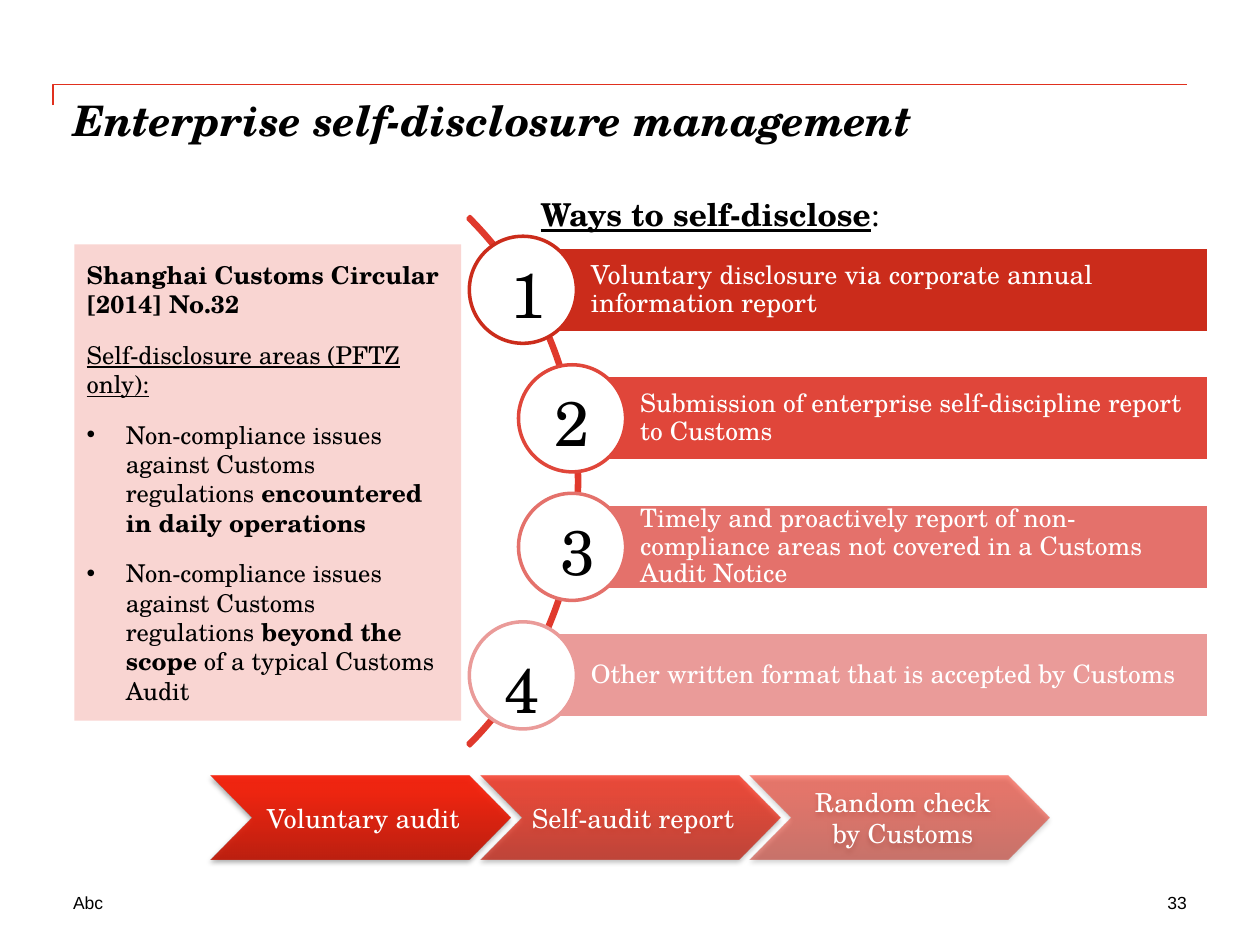
from lxml import etree
from pptx import Presentation
from pptx.dml.color import RGBColor
from pptx.enum.shapes import MSO_SHAPE
from pptx.enum.text import MSO_ANCHOR, MSO_AUTO_SIZE, PP_ALIGN
from pptx.oxml import parse_xml
from pptx.oxml.ns import qn
from pptx.util import Inches, Pt

RECT, DISK = MSO_SHAPE.RECTANGLE, MSO_SHAPE.OVAL
ARC, ARROW = MSO_SHAPE.BLOCK_ARC, MSO_SHAPE.CHEVRON
TOP, MID = MSO_ANCHOR.TOP, MSO_ANCHOR.MIDDLE
LEFT, MIDDLE, RIGHT = PP_ALIGN.LEFT, PP_ALIGN.CENTER, PP_ALIGN.RIGHT
NO_FIT = MSO_AUTO_SIZE.NONE
SERIF, SANS = "TeX Gyre Schola", "Arial"
HUES = {
    "ink": "000000", "paper": "FFFFFF", "rule": "E0301E", "arc": "E0392C",
    "panel": "F9D5D2", "bar1": "CB2C1B", "bar2": "E0463A", "bar3": "E4716B",
    "bar4": "EA9B99", "deep": "BD1201", "glow": "F51801", "top": "F71700",
}
WIDE, HIGH = Inches(10), Inches(7.5)
SIDES = ("margin_left", "margin_top", "margin_right", "margin_bottom")
BOLD, PLAIN = {"bold": True}, {}
UNDER = {"underline": True}
NS = "http://schemas.openxmlformats.org/drawingml/2006/main"


def hue(name):
    return RGBColor.from_string(HUES[name])


def across(share):
    return round(WIDE * share / 100)


def down(share):
    return round(HIGH * share / 100)


def place(box):
    x, y, w, h = box
    return across(x), down(y), across(w), down(h)


def apply(item, form):
    for key, value in form.items():
        setattr(item, key, value)


def write(frame, paras, size, color="ink", font=SERIF, ins=(0, 0, 0, 0),
          anchor=TOP, wrap=True, **form):
    apply(frame, {"word_wrap": wrap, "auto_size": NO_FIT, "vertical_anchor": anchor})
    apply(frame, dict(zip(SIDES, map(across, ins))))
    for i, runs in enumerate(paras):
        para = frame.paragraphs[0] if i == 0 else frame.add_paragraph()
        apply(para, {"alignment": LEFT, **form})
        for words, style in runs:
            run = para.add_run()
            run.text = words
            apply(run.font, {"name": font, "size": Pt(size), **style})
            run.font.color.rgb = hue(color)


def label(slide, box, runs, size, **form):
    write(slide.shapes.add_textbox(*place(box)).text_frame, [runs], size, **form)


def draw(slide, kind, box, fill=None, line=None):
    shape = slide.shapes.add_shape(kind, *place(box))
    shape.shadow.inherit = False
    if fill:
        shape.fill.solid()
        shape.fill.fore_color.rgb = hue(fill)
    else:
        shape.fill.background()
    if line:
        shape.line.color.rgb = hue(line)
        shape.line.width = Pt(2)
    else:
        shape.line.fill.background()
    return shape


def header(slide, box):
    x, y, w, h = box
    pen = slide.shapes.build_freeform(across(x), down(y + h))
    pen.add_line_segments(
        [(across(x), down(y)), (across(x + w), down(y))], close=False)
    rule = pen.convert_to_shape()
    rule.shadow.inherit = False
    rule.fill.background()
    rule.line.color.rgb = hue("rule")
    rule.line.width = Pt(1)
    title = slide.shapes.title
    spot = place((5.8, 10, 88.3, 13.33))
    apply(title, dict(zip(("left", "top", "width", "height"), spot)))
    style = {"bold": True, "italic": True}
    write(title.text_frame, [[("Enterprise self-disclosure management", style)]], 24)


def footer(slide, box):
    x, y, w, h = box
    label(slide, (x, y, w * 0.32, h), [("Abc", PLAIN)], 10, font=SANS)
    label(slide, (x + w * 0.81, y, w * 0.19, h), [("33", PLAIN)], 10,
          font=SANS, alignment=RIGHT)


def panel(slide, box):
    issue = "Non-compliance issues against Customs regulations "
    paras = [
        [("Shanghai Customs Circular [2014] No.32", BOLD)],
        [("Self-disclosure areas (PFTZ only):", UNDER)],
        [(issue, PLAIN), ("encountered in daily operations", BOLD)],
        [(issue, PLAIN), ("beyond the scope", BOLD),
         (" of a typical Customs Audit", PLAIN)],
    ]
    frame = draw(slide, RECT, box, "panel").text_frame
    write(frame, paras, 14, ins=(1, 0.5, 1, 0.5), anchor=MID, space_after=Pt(12))
    for para in frame.paragraphs[2:]:
        props = para._p.get_or_add_pPr()
        props.set("marL", str(across(3.1)))
        props.set("indent", str(across(-3.1)))
        face = etree.SubElement(props, qn("a:buFont"))
        face.set("typeface", SANS)
        etree.SubElement(props, qn("a:buChar")).set("char", "•")


def ways(slide, box):
    x, y, w, h = box
    row = h / 11
    big = {"size": Pt(15)}
    items = [
        (0, 0.4, 2, [("Voluntary ", big), ("disclosure", PLAIN), (" via ", big),
                     ("corporate", PLAIN), (" annual information report", big)]),
        (3.9, 0, 2, [("Submission of enterprise self-discipline report to Customs", PLAIN)]),
        (3.9, 0.5, 2, [("Timely and proactively report of non-compliance areas "
                        "not covered in a Customs Audit Notice", PLAIN)]),
        (0, -0.1, 3.07, [("Other written format that is accepted by Customs", PLAIN)]),
    ]
    arc = draw(slide, ARC, (-13.4, 11.33, 59.4, 79.2), line="arc")
    for i, value in enumerate((189, 27, 0.004)):
        arc.adjustments[i] = value
    tall = row * 2.5
    wide = tall * HIGH / WIDE
    for i, (shift, dx, dy, runs) in enumerate(items):
        tone = f"bar{i + 1}"
        left, top = x + shift, y + 3 * row * i
        bar = draw(slide, RECT, (left, top, w - shift, 2 * row), tone, "paper")
        write(bar.text_frame, [runs], 14.5, color="paper",
              ins=(5.4, 0.4, 0.4, 0.4), anchor=MID, line_spacing=0.9)
        high = top - row / 4
        draw(slide, DISK, (left - wide / 2, high, wide, tall), "paper", tone)
        label(slide, (left - 2.5 + dx, high + dy, 5, 8.5),
              [(str(i + 1), PLAIN)], 36, wrap=False, alignment=MIDDLE)
    label(slide, (42.9, 20.67, 45, 5.2),
          [("Ways to self-disclose", {**BOLD, **UNDER}), (":", PLAIN)], 18)


def shade(shape, alpha):
    shape.fill.gradient()
    shape.fill.gradient_angle = 90
    stops = "".join(
        f'<a:gs pos="{pos * 1000}"><a:srgbClr val="{HUES[name]}">'
        f'<a:alpha val="{alpha * 1000}"/></a:srgbClr></a:gs>'
        for pos, name in ((0, "deep"), (80, "glow"), (100, "top")))
    props = shape._element.spPr
    old = props.find(".//" + qn("a:gsLst"))
    old.getparent().replace(old, parse_xml(f'<a:gsLst xmlns:a="{NS}">{stops}</a:gsLst>'))
    props.find(qn("a:effectLst")).append(parse_xml(
        f'<a:outerShdw xmlns:a="{NS}" blurRad="{Pt(3.1)}" dist="{Pt(1.8)}" '
        f'dir="5400000" rotWithShape="0"><a:srgbClr val="{HUES["ink"]}">'
        '<a:alpha val="35000"/></a:srgbClr></a:outerShdw>'))


def steps(slide, box):
    x, y, w, h = box
    wide = w / 2.8
    items = (("Voluntary audit", 90), ("Self-audit report", 70),
             ("Random check by Customs", 50))
    for i, (words, alpha) in enumerate(items):
        shape = draw(slide, ARROW, (x + 0.9 * wide * i, y, wide, h))
        shade(shape, alpha)
        write(shape.text_frame, [[(words, PLAIN)]], 15, color="paper",
              ins=(0.7, 0.2, 0.2, 0.2), anchor=MID, alignment=MIDDLE)


def main():
    deck = Presentation()
    apply(deck, {"slide_width": WIDE, "slide_height": HIGH})
    slide = deck.slides.add_slide(deck.slide_layouts[5])
    header(slide, (4.2, 8.93, 90, 2.2))
    panel(slide, (5.9, 25.87, 30.7, 50.4))
    ways(slide, (41.5, 26.13, 54.4, 49.87))
    steps(slide, (16.7, 82.13, 66.6, 8.8))
    footer(slide, (5.8, 94.4, 88.4, 2.27))
    deck.save("out.pptx")


if __name__ == "__main__":
    main()
